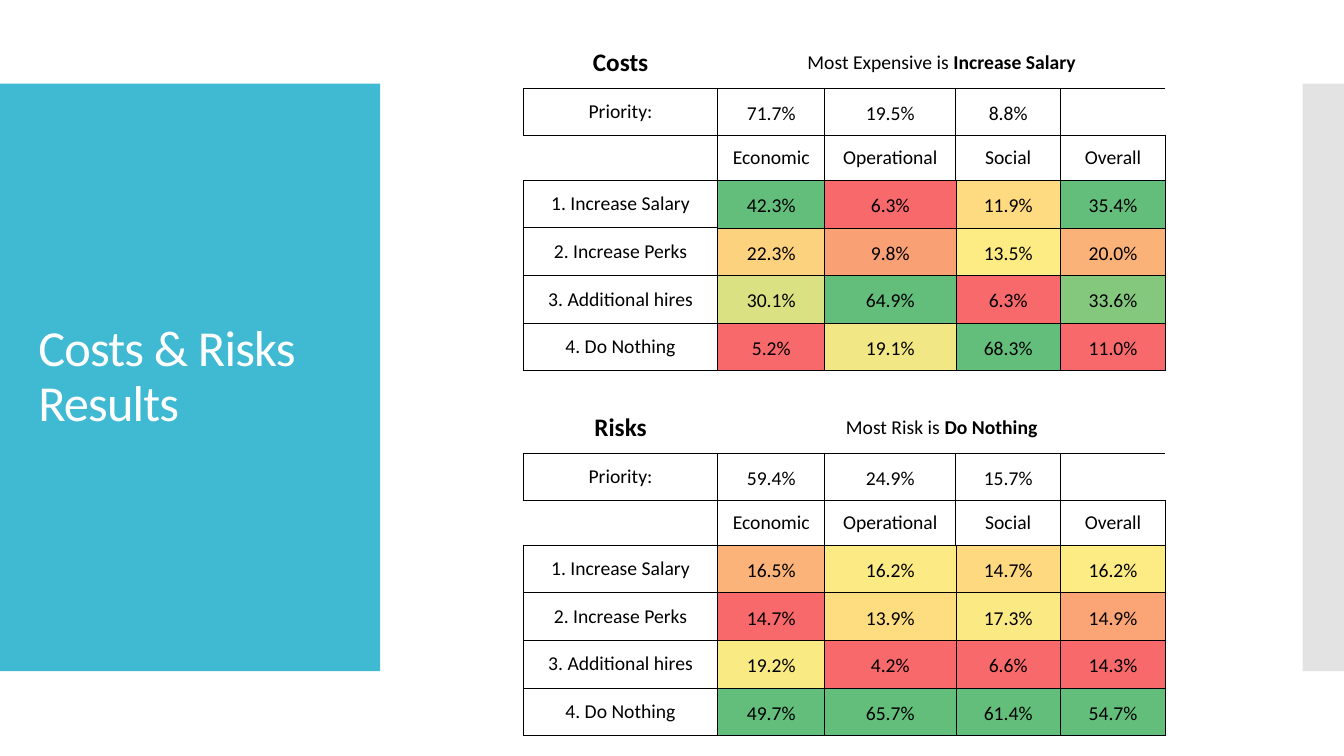
"""Build the Costs & Risks Results slide with two heat-map tables."""
from lxml.etree import SubElement
from pptx import Presentation
from pptx.dml.color import RGBColor
from pptx.enum.shapes import MSO_SHAPE as Preset
from pptx.enum.text import MSO_ANCHOR as Anchor, PP_ALIGN as Align
from pptx.oxml.ns import qn
from pptx.util import Inches, Pt

TITLE = "Costs & Risks Results"
CRITERIA = ["", "Economic", "Operational", "Social", "Overall"]
OPTIONS = ["1. Increase Salary", "2. Increase Perks", "3. Additional hires", "4. Do Nothing"]
TABLES = [
    {
        "top": 0.37, "name": "Costs", "finding": ("Most Expensive is ", "Increase Salary"),
        "priority": ["71.7%", "19.5%", "8.8%"],
        "scores": [
            [("42.3%", "63BE7B"), ("6.3%", "F8696B"), ("11.9%", "FEDB80"), ("35.4%", "63BE7B")],
            [("22.3%", "FDD27F"), ("9.8%", "FAA075"), ("13.5%", "FDEB84"), ("20.0%", "FBB279")],
            [("30.1%", "D9E182"), ("64.9%", "63BE7B"), ("6.3%", "F8696B"), ("33.6%", "84C87D")],
            [("5.2%", "F8696B"), ("19.1%", "F1E784"), ("68.3%", "63BE7B"), ("11.0%", "F8696B")],
        ],
    },
    {
        "top": 3.99, "name": "Risks", "finding": ("Most Risk is ", "Do Nothing"),
        "priority": ["59.4%", "24.9%", "15.7%"],
        "scores": [
            [("16.5%", "FBB379"), ("16.2%", "FCEA84"), ("14.7%", "FED980"), ("16.2%", "FDEB84")],
            [("14.7%", "F8696B"), ("13.9%", "FEDD81"), ("17.3%", "FBEA84"), ("14.9%", "FBA576")],
            [("19.2%", "F9EA84"), ("4.2%", "F8696B"), ("6.6%", "F8696B"), ("14.3%", "F8696B")],
            [("49.7%", "63BE7B"), ("65.7%", "63BE7B"), ("61.4%", "63BE7B"), ("54.7%", "63BE7B")],
        ],
    },
]
PANELS = [((0, 0.83, 3.77, 5.83), "40BAD2", 100), ((12.92, 0.83, 0.41, 5.83), "C8C8C8", 50)]
TABLE_LEFT = 5.19
COLUMN_WIDTHS = [1.93, 1.06, 1.3, 1.04, 1.04]
ROW_HEIGHTS = [0.5, 0.47, 0.44] + [0.47] * len(OPTIONS)
CELL_FORMAT = {"vertical_anchor": Anchor.MIDDLE, "margin_left": Inches(0.1), "margin_right": Inches(0.1),
               "margin_top": Inches(0.1), "margin_bottom": Inches(0.1)}
SIDES = "LRTB"
OPEN_CELLS = {(1, 4): "LTB", (2, 0): "RTB"}


def color(value):
    return RGBColor.from_string(value)


def apply(target, values):
    for name, value in values.items():
        setattr(target, name, value)


def add_span(para, text, size, bold=False, ink="000000"):
    span = para.add_run()
    span.text = text
    apply(span.font, {"name": "Calibri", "size": Pt(size), "bold": bold})
    span.font.color.rgb = color(ink)
    return span


def add_panel(page, frame, fill, opacity):
    panel = page.shapes.add_shape(Preset.RECTANGLE, *map(Inches, frame))
    panel.shadow.inherit = False
    panel.fill.solid()
    panel.fill.fore_color.rgb = color(fill)
    panel.line.fill.background()
    if opacity < 100:
        tone = panel.fill._xPr.find(qn("a:solidFill"))[0]
        SubElement(tone, qn("a:alpha"), val=str(opacity * 1000))
    page.shapes._spTree.insert(2, panel._element)


def set_borders(cell, visible, width):
    properties = cell._tc.get_or_add_tcPr()
    for side in SIDES:
        line = SubElement(properties, qn(f"a:ln{side}"), w=str(Pt(width)))
        if side in visible:
            SubElement(SubElement(line, qn("a:solidFill")), qn("a:srgbClr"), val="000000")
        else:
            SubElement(line, qn("a:noFill"))


def format_cell(cell, spans, visible, width, fill=None, spacing=1.0):
    set_borders(cell, visible, width)
    if fill:
        cell.fill.solid()
        cell.fill.fore_color.rgb = color(fill)
    else:
        cell.fill.background()
    if spans:
        apply(cell, CELL_FORMAT)
        para = cell.text_frame.paragraphs[0]
        apply(para, {"alignment": Align.CENTER, "line_spacing": spacing})
        for text, size, bold in spans:
            add_span(para, text, size, bold)


def add_results(page, data):
    frame = page.shapes.add_table(len(ROW_HEIGHTS), len(COLUMN_WIDTHS), Inches(TABLE_LEFT), Inches(data["top"]),
                                  Inches(sum(COLUMN_WIDTHS)), Inches(sum(ROW_HEIGHTS)))
    table = frame.table
    apply(table, {"first_row": False, "horz_banding": False})
    for column, width in zip(table.columns, COLUMN_WIDTHS):
        column.width = Inches(width)
    for row, height in zip(table.rows, ROW_HEIGHTS):
        row.height = Inches(height)

    table.cell(0, 1).merge(table.cell(0, 4))
    lead, winner = data["finding"]
    headings = [[(data["name"], 18, True)], [(lead, 14, False), (winner, 14, True)], [], [], []]
    for index, spans in enumerate(headings):
        format_cell(table.cell(0, index), spans, "B", 0.75)

    rows = [[("Priority:", None)] + [(value, None) for value in data["priority"]] + [("", None)],
            [(label, None) for label in CRITERIA]]
    rows += [[(option, None)] + scores for option, scores in zip(OPTIONS, data["scores"])]
    for r, row in enumerate(rows, 1):
        for c, (text, fill) in enumerate(row):
            spans = [(text, 14, False)] if text else []
            spacing = 1.15 if text.endswith("%") else 1.0
            format_cell(table.cell(r, c), spans, OPEN_CELLS.get((r, c), SIDES),
                        0.5 if fill else 0.75, fill, spacing)


def main():
    deck = Presentation()
    apply(deck, {"slide_width": Inches(13.33), "slide_height": Inches(7.5)})
    page = deck.slides.add_slide(deck.slide_layouts[5])
    for panel in PANELS:
        add_panel(page, *panel)

    title = page.shapes.title
    apply(title, {"left": Inches(0.28), "top": Inches(1.23), "width": Inches(3.22), "height": Inches(5.03)})
    apply(title.text_frame, {"vertical_anchor": Anchor.MIDDLE, "word_wrap": True})
    para = title.text_frame.paragraphs[0]
    apply(para, {"alignment": Align.LEFT, "line_spacing": 0.9})
    span = add_span(para, TITLE, 36, ink="FFFFFF")
    span.font._element.set("spc", "-60")

    for data in TABLES:
        add_results(page, data)
    deck.save("out.pptx")


if __name__ == "__main__":
    main()
